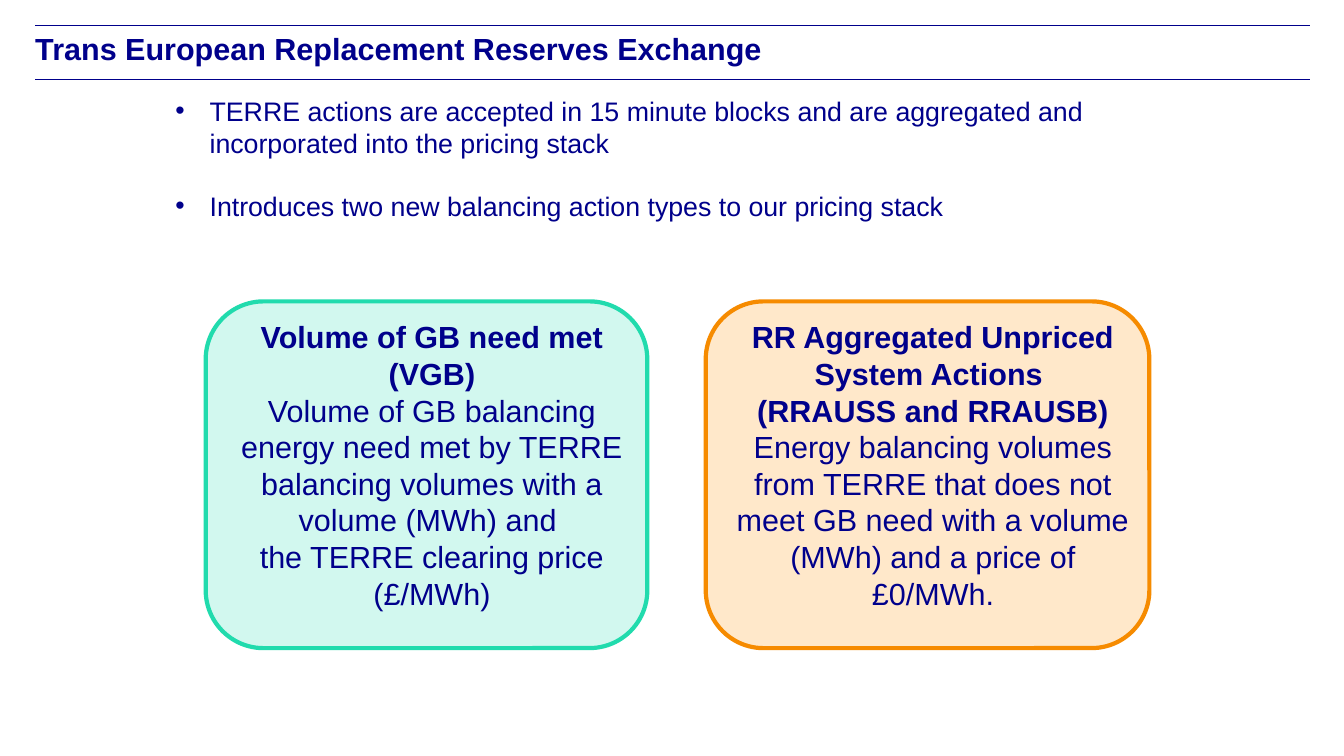
"""Build the slide on the Trans European Replacement Reserves Exchange."""
import pptx
import pptx.dml.color
import pptx.enum.shapes
import pptx.enum.text
import pptx.oxml.ns
import pptx.util
from lxml import etree

Inches = pptx.util.Inches
Pt = pptx.util.Pt
ALIGN = pptx.enum.text.PP_ALIGN

NAVY = "00008B"
TITLE = "Trans European Replacement Reserves Exchange"
BULLETS = [
    "TERRE actions are accepted in 15 minute blocks and are aggregated and incorporated into the pricing stack",
    "Introduces two new balancing action types to our pricing stack",
]
CARDS = [
    {"left": 2.04, "width": 4.38, "fill": "D2F8EF", "line": "21DBAD",
     "heading": "Volume of GB need met (VGB)",
     "body": "Volume of GB balancing energy need met by TERRE balancing volumes "
             "with a volume (MWh) and \nthe TERRE clearing price (£/MWh)"},
    {"left": 7, "width": 4.4, "fill": "FFE8CA", "line": "F68B00",
     "heading": "RR Aggregated Unpriced System Actions \n(RRAUSS and RRAUSB)",
     "body": "Energy balancing volumes from TERRE that does not meet GB need "
             "with a volume (MWh) and a price of £0/MWh."},
]
MARGIN, CONTENT_WIDTH = 0.35, 12.64
RULE_TOPS = (0.25, 0.79)
CARD_TOP, CARD_HEIGHT = 2.99, 3.44
BULLET_INDENT = 0.34


def color(value):
    return pptx.dml.color.RGBColor.from_string(value)


def write(paragraph, text, size=21.8, bold=False, align=ALIGN.LEFT, bullet=False, before=0):
    if bullet:
        properties = paragraph._p.get_or_add_pPr()
        properties.set("marL", str(Inches(BULLET_INDENT)))
        properties.set("indent", str(-Inches(BULLET_INDENT)))
        etree.SubElement(properties, pptx.oxml.ns.qn("a:buFont")).set("typeface", "Arial")
        etree.SubElement(properties, pptx.oxml.ns.qn("a:buChar")).set("char", "•")
    paragraph.text = text
    paragraph.alignment = align
    if before:
        paragraph.space_before = Pt(before)
    for run in paragraph.runs:
        run.font.name = "Arial"
        run.font.size = Pt(size)
        run.font.bold = bold
        run.font.color.rgb = color(NAVY)


def prepare_frame(shape, left=0.1, top=0.05, right=0.1, bottom=0.05):
    frame = shape.text_frame
    frame.word_wrap = True
    frame.vertical_anchor = pptx.enum.text.MSO_ANCHOR.TOP
    frame.margin_left, frame.margin_top = Inches(left), Inches(top)
    frame.margin_right, frame.margin_bottom = Inches(right), Inches(bottom)
    return frame


def add_rule(slide, top):
    rule = slide.shapes.add_connector(
        pptx.enum.shapes.MSO_CONNECTOR.STRAIGHT, Inches(MARGIN), Inches(top),
        Inches(MARGIN + CONTENT_WIDTH), Inches(top))
    rule.line.color.rgb = color(NAVY)
    rule.line.width = Pt(0.5)
    etree.SubElement(rule._element.spPr, pptx.oxml.ns.qn("a:effectLst"))


def add_card(slide, card):
    shape = slide.shapes.add_shape(
        pptx.enum.shapes.MSO_SHAPE.ROUNDED_RECTANGLE, Inches(card["left"]),
        Inches(CARD_TOP), Inches(card["width"]), Inches(CARD_HEIGHT))
    shape.shadow.inherit = False
    shape.fill.solid()
    shape.fill.fore_color.rgb = color(card["fill"])
    shape.line.color.rgb = color(card["line"])
    shape.line.width = Pt(3)
    frame = prepare_frame(shape, left=0.11, top=0, right=0, bottom=0)
    write(frame.paragraphs[0], card["heading"], bold=True, align=ALIGN.CENTER)
    write(frame.add_paragraph(), card["body"], align=ALIGN.CENTER)


def main():
    presentation = pptx.Presentation()
    presentation.slide_width, presentation.slide_height = Inches(13.33), Inches(7.5)
    slide = presentation.slides.add_slide(presentation.slide_layouts[6])

    for top in RULE_TOPS:
        add_rule(slide, top)

    title = slide.shapes.add_textbox(Inches(MARGIN), Inches(0.3), Inches(CONTENT_WIDTH), Inches(0.49))
    write(prepare_frame(title, 0, 0, 0, 0).paragraphs[0], TITLE, bold=True)

    for card in CARDS:
        add_card(slide, card)

    bullets = slide.shapes.add_textbox(Inches(1.64), Inches(0.89), Inches(10.05), Inches(1.38))
    frame = prepare_frame(bullets)
    for index, text in enumerate(BULLETS):
        paragraph = frame.add_paragraph() if index else frame.paragraphs[0]
        write(paragraph, text, size=19.1, bullet=True, before=22 if index else 0)

    presentation.save("out.pptx")


if __name__ == "__main__":
    main()
